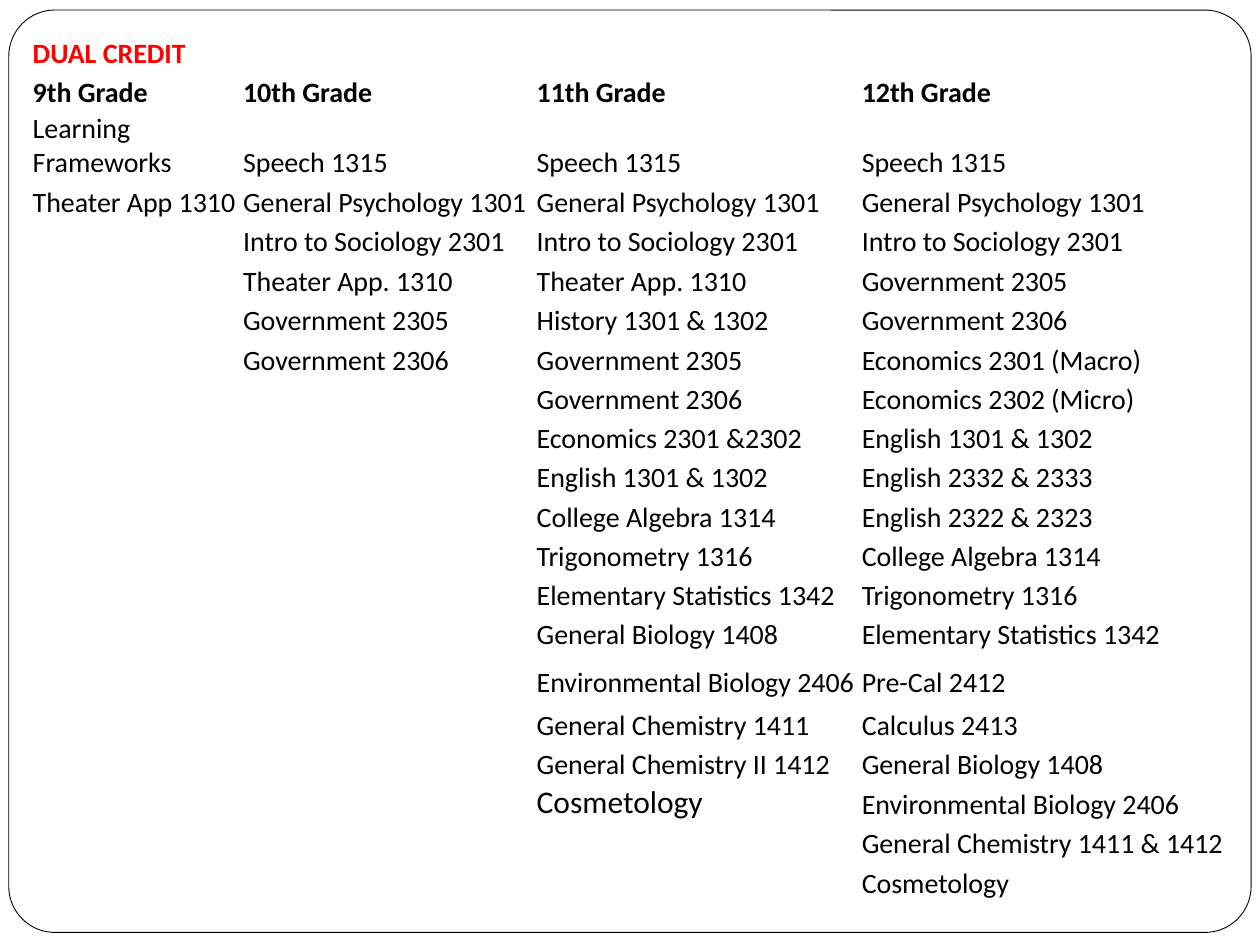
from pptx import Presentation
from pptx.dml.color import RGBColor
from pptx.enum.shapes import MSO_SHAPE as Shape
from pptx.enum.text import MSO_ANCHOR as Anchor
from pptx.util import Inches, Pt

BLACK = RGBColor(0x00, 0x00, 0x00)
WHITE = RGBColor(0xFF, 0xFF, 0xFF)
RED = RGBColor(0xFF, 0x00, 0x00)

TITLE = "DUAL CREDIT"
COURSES = {
    "9th Grade": ["Learning Frameworks", "Theater App 1310"],
    "10th Grade": [
        "Speech 1315", "General Psychology 1301", "Intro to Sociology 2301",
        "Theater App. 1310", "Government 2305", "Government 2306",
    ],
    "11th Grade": [
        "Speech 1315", "General Psychology 1301", "Intro to Sociology 2301",
        "Theater App. 1310", "History 1301 & 1302", "Government 2305",
        "Government 2306", "Economics 2301 &2302", "English 1301 & 1302",
        "College Algebra 1314", "Trigonometry 1316",
        "Elementary Statistics 1342", "General Biology 1408",
        "Environmental Biology 2406", "General Chemistry 1411",
        "General Chemistry II 1412", "Cosmetology",
    ],
    "12th Grade": [
        "Speech 1315", "General Psychology 1301", "Intro to Sociology 2301",
        "Government 2305", "Government 2306", "Economics 2301 (Macro)",
        "Economics 2302 (Micro)", "English 1301 & 1302",
        "English 2332 & 2333", "English 2322 & 2323",
        "College Algebra 1314", "Trigonometry 1316",
        "Elementary Statistics 1342", "Pre-Cal 2412", "Calculus 2413",
        "General Biology 1408", "Environmental Biology 2406",
        "General Chemistry 1411 & 1412", "Cosmetology",
    ],
}
GRADE_WIDTHS = [1.67, 2.33, 2.58, 2.92]
TALL_ROWS = {2: 0.56, 5: 0.32, 15: 0.38, 16: 0.34}
TABLE_HEIGHT = 6.9


class CourseSlide:
    font_name = "Calibri"
    font_size = 16
    inset = Inches(0.01)

    def __init__(self, deck):
        self.slide = deck.slides.add_slide(deck.slide_layouts[6])

    def frame(self, left, top, width, height):
        border = self.slide.shapes.add_shape(
            Shape.ROUNDED_RECTANGLE,
            Inches(left), Inches(top), Inches(width), Inches(height))
        border.adjustments[0] = 0.05
        border.shadow.inherit = False
        border.fill.solid()
        border.fill.fore_color.rgb = WHITE
        border.line.color.rgb = BLACK
        border.line.width = Pt(0.5)

    def cell(self, cell, text, size, color, bold):
        cell.fill.background()
        cell.vertical_anchor = Anchor.BOTTOM
        cell.margin_left = cell.margin_right = cell.margin_top = self.inset
        cell.margin_bottom = 0
        cell.text = text
        font = cell.text_frame.paragraphs[0].font
        font.name = self.font_name
        font.size = Pt(size)
        font.bold = bold
        font.color.rgb = color

    def table(self, left, top, height, widths, tall_rows, columns):
        row_count = max(map(len, columns))
        table = self.slide.shapes.add_table(
            row_count, len(columns), Inches(left), Inches(top),
            Inches(sum(widths)), Inches(height)).table
        table.first_row = table.horz_banding = False
        for column, width in zip(table.columns, widths):
            column.width = Inches(width)
        plain_height = (height - sum(tall_rows.values())) / (row_count - len(tall_rows))
        for index, row in enumerate(table.rows):
            row.height = Inches(tall_rows.get(index, plain_height))
            for entries, cell in zip(columns, row.cells):
                text = entries[index] if index < len(entries) else ""
                enlarged = text == "Cosmetology" and index < row_count - 1
                self.cell(cell, text, 18 if enlarged else self.font_size,
                          RED if index == 0 else BLACK, index < 2)


def main():
    deck = Presentation()
    deck.slide_width = Inches(10)
    deck.slide_height = Inches(7.5)
    dual_credit = CourseSlide(deck)
    dual_credit.frame(0.07, 0.08, 9.86, 7.32)
    columns = [["", grade, *courses] for grade, courses in COURSES.items()]
    columns[0][0] = TITLE
    dual_credit.table(0.25, 0.25, TABLE_HEIGHT, GRADE_WIDTHS, TALL_ROWS, columns)
    deck.save("out.pptx")


if __name__ == "__main__":
    main()
